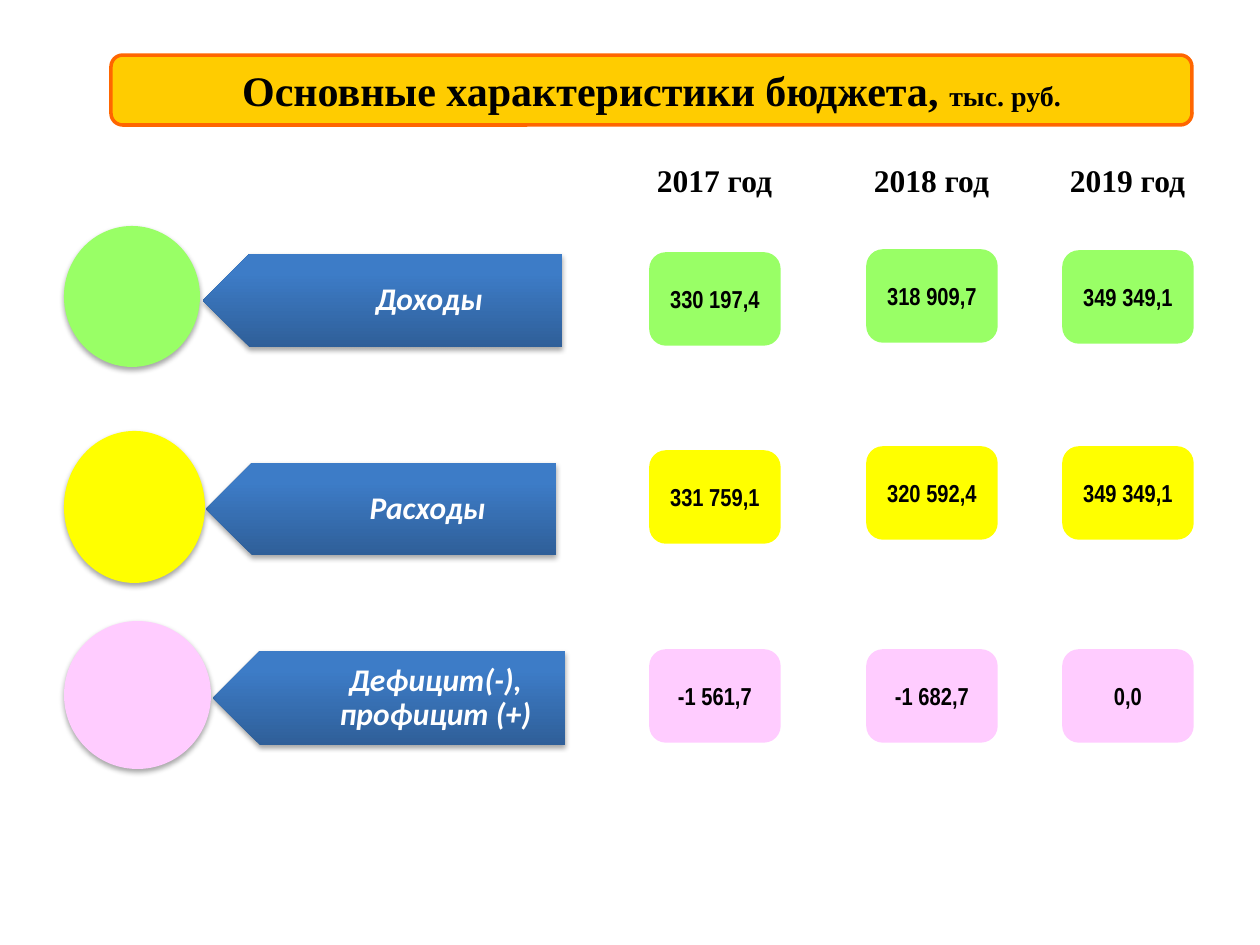
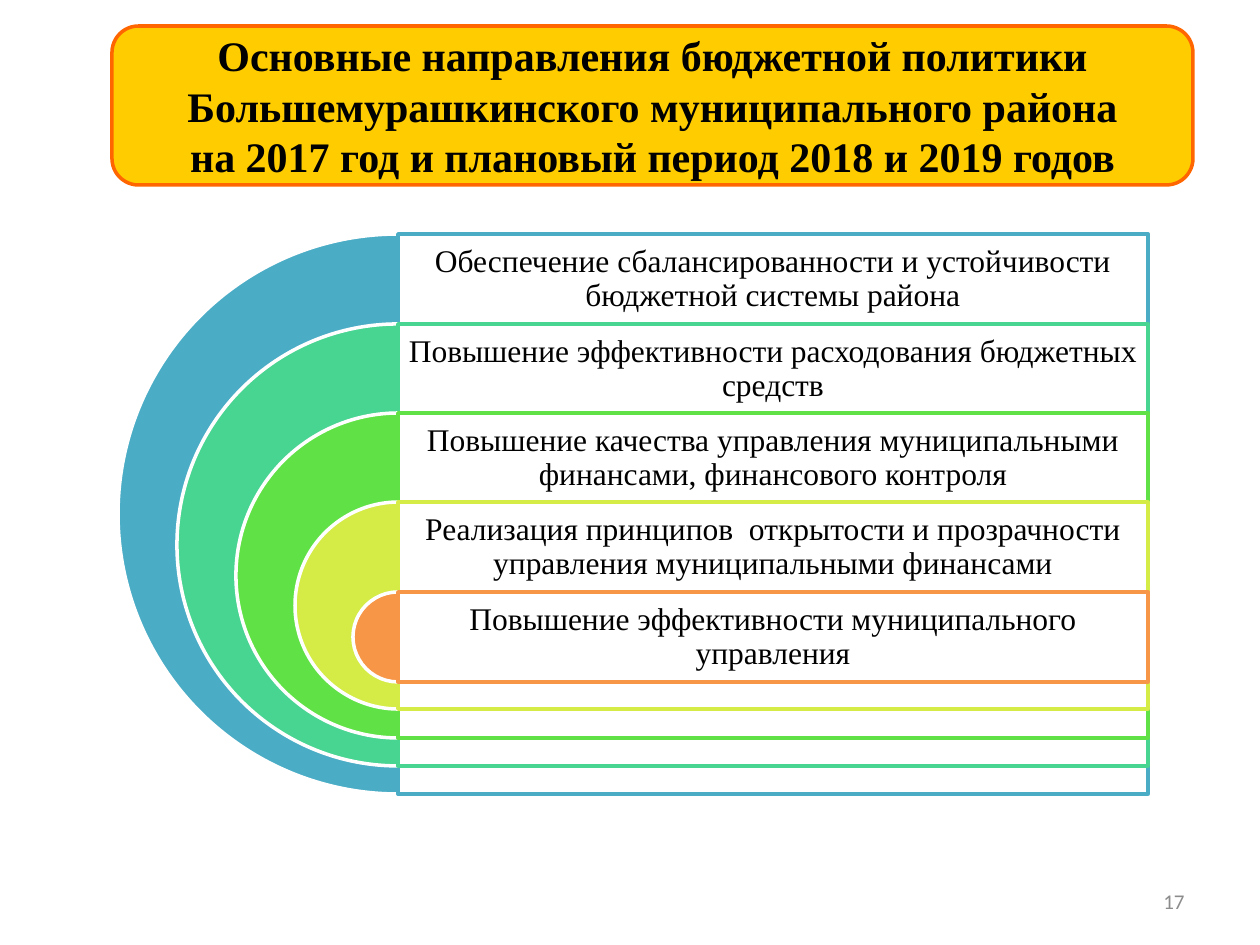
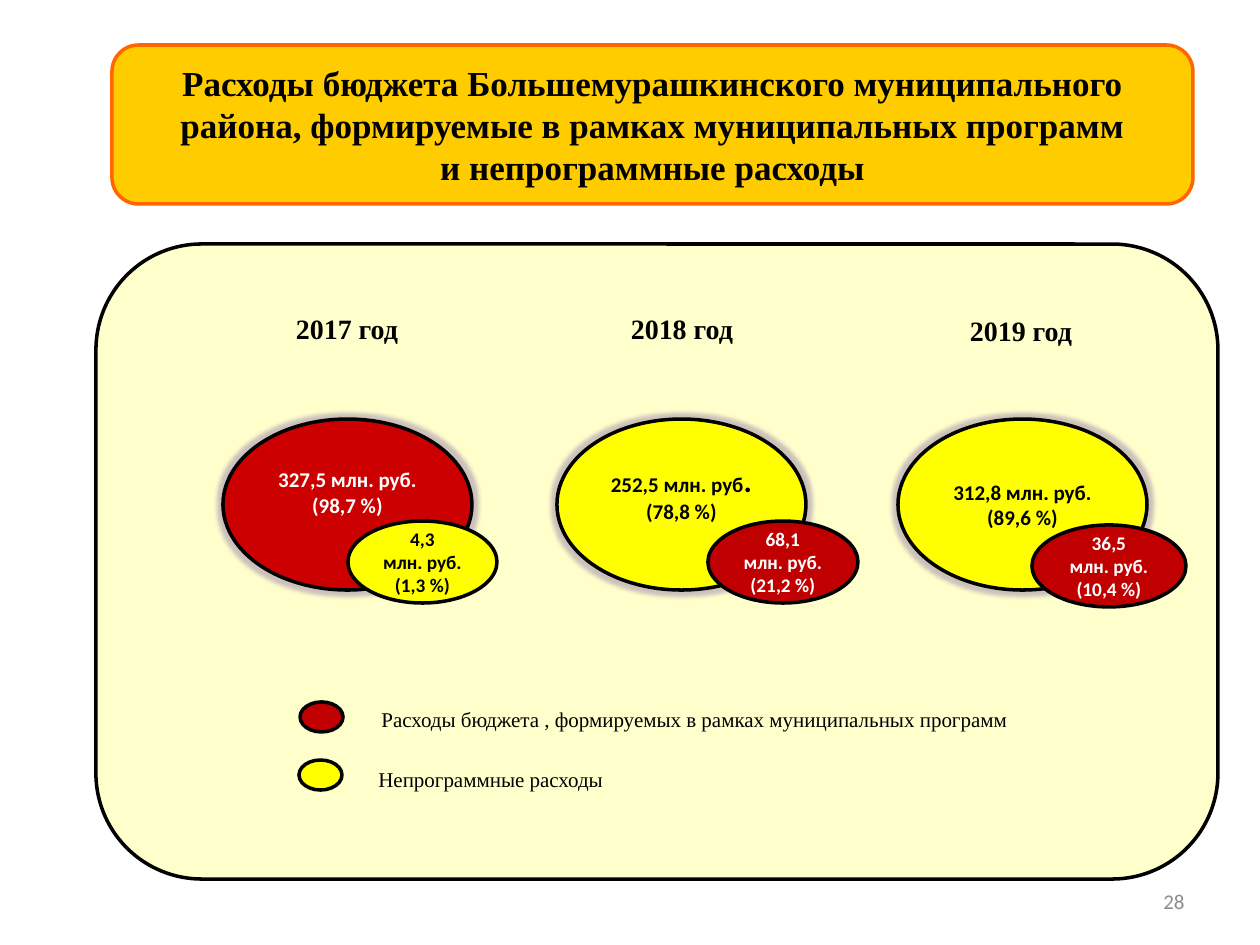
from dataclasses import dataclass
from typing import Any, NamedTuple, Optional

from lxml.etree import SubElement
from pptx import Presentation
from pptx.dml.color import RGBColor
from pptx.enum.shapes import MSO_SHAPE
from pptx.enum.text import MSO_ANCHOR, MSO_AUTO_SIZE, PP_ALIGN
from pptx.oxml.ns import qn
from pptx.util import Emu, Pt

EMU_PER_PX = 914400 / 126

BLACK = RGBColor(0x00, 0x00, 0x00)
WHITE = RGBColor(0xFF, 0xFF, 0xFF)
GREY = RGBColor(0x8C, 0x8C, 0x8C)
GOLD = RGBColor(0xFF, 0xCC, 0x00)
ORANGE = RGBColor(0xFF, 0x66, 0x00)
GREEN = RGBColor(0x99, 0xFF, 0x66)
YELLOW = RGBColor(0xFF, 0xFF, 0x00)
PINK = RGBColor(0xFF, 0xCC, 0xFF)
CREAM = RGBColor(0xFF, 0xFF, 0xCC)
RED = RGBColor(0xCC, 0x00, 0x00)
DARK_RED = RGBColor(0xC0, 0x00, 0x00)
DARK_BLUE = RGBColor(0x2F, 0x5F, 0x99)
LIGHT_BLUE = RGBColor(0x3D, 0x7C, 0xC7)
PURPLE = RGBColor(0x80, 0x64, 0xA2)
RING_TEAL = RGBColor(0x4B, 0xAC, 0xC6)
RING_MINT = RGBColor(0x48, 0xD4, 0x91)
RING_GREEN = RGBColor(0x60, 0xE1, 0x46)
RING_LIME = RGBColor(0xD5, 0xEC, 0x46)
RING_ORANGE = RGBColor(0xF7, 0x96, 0x46)

SERIF = "Times New Roman"
TITLE_FONT = {"name": SERIF, "size": Pt(24), "bold": True}
SMALL_TITLE_FONT = {**TITLE_FONT, "size": Pt(20)}
UNIT_FONT = {**TITLE_FONT, "size": Pt(16)}
YEAR_FONT = {**TITLE_FONT, "size": Pt(18)}
GOAL_FONT = {"name": SERIF, "size": Pt(18)}
LEGEND_FONT = {"name": SERIF, "size": Pt(12)}
ARROW_FONT = {"name": "Calibri", "size": Pt(18), "bold": True, "italic": True}
VALUE_FONT = {"name": "Arial Narrow", "size": Pt(14), "bold": True}
LARGE_OVAL_FONT = {"name": "Calibri", "size": Pt(12), "bold": True}
SMALL_OVAL_FONT = {"name": "Calibri", "size": Pt(11), "bold": True}
NUMBER_FONT = {"name": "Calibri", "size": Pt(12)}


class Box(NamedTuple):
    left: int
    top: int
    width: int
    height: int


@dataclass(frozen=True)
class BudgetRow:
    label: str
    colour: RGBColor
    circle: Box
    arrow: Box
    values: tuple[str, ...]
    value_tops: tuple[int, ...]


@dataclass(frozen=True)
class Goal:
    text: str
    colour: RGBColor
    diameter: int


@dataclass(frozen=True)
class Oval:
    box: Box
    text: str
    fill: RGBColor
    text_colour: RGBColor
    bottom_margin: int = 6


BUDGET_YEARS = {"2017 год": 651, "2018 год": 868, "2019 год": 1064}
BUDGET_ROWS = (
    BudgetRow("Доходы", GREEN, Box(64, 226, 136, 141), Box(203, 254, 359, 93),
              ("330 197,4", "318 909,7", "349 349,1"), (254, 251, 252)),
    BudgetRow("Расходы", YELLOW, Box(64, 431, 141, 152), Box(206, 463, 350, 92),
              ("331 759,1", "320 592,4", "349 349,1"), (452, 448, 448)),
    BudgetRow("Дефицит(-), профицит (+)", PINK, Box(64, 621, 147, 148), Box(213, 651, 352, 94),
              ("-1 561,7", "-1 682,7", "0,0"), (651, 651, 651)),
)
GOALS = (
    Goal("Обеспечение сбалансированности и устойчивости бюджетной системы района", RING_TEAL, 560),
    Goal("Повышение эффективности расходования бюджетных средств", RING_MINT, 442),
    Goal("Повышение качества управления муниципальными финансами, финансового контроля",
         RING_GREEN, 325),
    Goal("Реализация принципов  открытости и прозрачности управления муниципальными финансами",
         RING_LIME, 207),
    Goal("Повышение эффективности муниципального управления", RING_ORANGE, 90),
)
SPENDING_YEARS = {"2017 год": (283, 305), "2018 год": (618, 305), "2019 год": (957, 307)}
LARGE_OVALS = (
    Oval(Box(223, 419, 249, 171), "327,5 млн. руб.\n(98,7 %)", RED, WHITE, 31),
    Oval(Box(557, 419, 249, 171), "252,5 млн. руб\n(78,8 %)", YELLOW, BLACK, 31),
    Oval(Box(898, 419, 249, 171), "312,8 млн. руб.\n(89,6 %)", YELLOW, BLACK),
)
SMALL_OVALS = (
    Oval(Box(348, 521, 149, 82), "4,3\nмлн. руб.\n(1,3 %)", YELLOW, BLACK),
    Oval(Box(708, 521, 150, 82), "68,1\nмлн. руб.\n(21,2 %)", DARK_RED, WHITE),
    Oval(Box(1032, 525, 154, 82), "36,5\nмлн. руб.\n(10,4 %)", DARK_RED, WHITE),
)
LEGEND = (
    ("Расходы бюджета , формируемых в рамках муниципальных программ", DARK_RED,
     Box(300, 702, 43, 30), Box(369, 700, 796, 38)),
    ("Непрограммные расходы", YELLOW, Box(299, 760, 43, 30), Box(366, 760, 857, 38)),
)


def px(length: int) -> Emu:
    return Emu(round(length * EMU_PER_PX))


def place(box: Box) -> tuple[Emu, ...]:
    return tuple(px(length) for length in box)


def set_attributes(target: Any, values: dict[str, Any]) -> None:
    for name, value in values.items():
        setattr(target, name, value)


def add_run(paragraph: Any, text: str, font: dict[str, Any], colour: RGBColor) -> None:
    run = paragraph.add_run()
    run.text = text
    set_attributes(run.font, font)
    run.font.color.rgb = colour


def write_text(shape: Any, text: str, font: dict[str, Any], colour: RGBColor = BLACK,
               align: PP_ALIGN = PP_ALIGN.CENTER, spacing: Optional[float] = None,
               **frame_format: Any) -> None:
    frame = shape.text_frame
    defaults = {"word_wrap": True, "auto_size": MSO_AUTO_SIZE.NONE,
                "vertical_anchor": MSO_ANCHOR.MIDDLE}
    set_attributes(frame, {**defaults, **frame_format})
    for index, line in enumerate(text.split("\n")):
        paragraph = frame.add_paragraph() if index else frame.paragraphs[0]
        set_attributes(paragraph, {"alignment": align, "line_spacing": spacing})
        add_run(paragraph, line, font, colour)


def add_label(slide: Any, box: Box, text: str, font: dict[str, Any], **text_format: Any) -> None:
    write_text(slide.shapes.add_textbox(*place(box)), text, font, **text_format)


def add_figure(slide: Any, kind: MSO_SHAPE, box: Box, fill: Optional[RGBColor],
               line: Optional[RGBColor] = None) -> Any:
    shape = slide.shapes.add_shape(kind, *place(box))
    shape.shadow.inherit = False
    if fill is not None:
        shape.fill.solid()
        shape.fill.fore_color.rgb = fill
    if line is None:
        shape.line.fill.background()
    else:
        shape.line.color.rgb = line
        shape.line.width = Pt(2)
    return shape


def add_effect(shape: Any, kind: str, colour: RGBColor, opacity: int, **lengths: int) -> None:
    effects = shape.element.spPr.find(qn("a:effectLst"))
    effect = SubElement(effects, qn(kind), {name: str(value) for name, value in lengths.items()})
    tint = SubElement(effect, qn("a:srgbClr"), val=str(colour))
    SubElement(tint, qn("a:alpha"), val=str(opacity * 1000))


def add_drop_shadow(shape: Any) -> None:
    add_effect(shape, "a:outerShdw", BLACK, 35,
               blurRad=Pt(3.1), dist=Pt(1.8), dir=5400000, rotWithShape=0)


def add_titled_slide(presentation: Any, box: Box, text: str, font: dict[str, Any]) -> Any:
    slide = presentation.slides.add_slide(presentation.slide_layouts[5])
    banner = add_figure(slide, MSO_SHAPE.ROUNDED_RECTANGLE, box, GOLD, ORANGE)
    title = slide.shapes.title
    set_attributes(title, dict(zip(("left", "top", "width", "height"), place(box))))
    write_text(title, text, font)
    banner.element.addnext(title.element)
    return slide


def add_page_number(slide: Any, number: str) -> None:
    add_label(slide, Box(903, 876, 294, 50), number, NUMBER_FONT,
              colour=GREY, align=PP_ALIGN.RIGHT)


def add_budget_row(slide: Any, row: BudgetRow) -> None:
    arrow = add_figure(slide, MSO_SHAPE.PENTAGON, row.arrow, None)
    arrow.element.spPr.find(qn("a:xfrm")).set("flipH", "1")
    arrow.fill.gradient()
    arrow.fill.gradient_angle = 90
    stops = ((DARK_BLUE, 0), (LIGHT_BLUE, 0.8))
    for stop, (colour, position) in zip(arrow.fill.gradient_stops, stops):
        stop.color.rgb = colour
        stop.position = position
    add_drop_shadow(arrow)
    left, top, width, height = row.arrow
    add_label(slide, Box(left + 24, top, width - 24, height), row.label, ARROW_FONT,
              colour=WHITE, spacing=0.9, margin_left=px(87), margin_right=px(18))
    add_drop_shadow(add_figure(slide, MSO_SHAPE.OVAL, row.circle, row.colour))
    for value, value_top, year_left in zip(row.values, row.value_tops, BUDGET_YEARS.values()):
        tile = add_figure(slide, MSO_SHAPE.ROUNDED_RECTANGLE,
                          Box(year_left, value_top, 128, 90), row.colour, row.colour)
        write_text(tile, value, VALUE_FONT)


def add_goal(slide: Any, goal: Goal, top: int) -> None:
    axis, width, height = 398, 750, 90
    size = goal.diameter
    ring = add_figure(slide, MSO_SHAPE.PIE, Box(axis - size // 2, top, size, size),
                      goal.colour, WHITE)
    ring.adjustments[0] = 54
    ring.adjustments[1] = 162
    panel = add_figure(slide, MSO_SHAPE.RECTANGLE, Box(axis, top, width, size),
                       WHITE, goal.colour)
    white = panel.element.spPr.find(qn("a:solidFill")).find(qn("a:srgbClr"))
    SubElement(white, qn("a:alpha"), val="90000")
    add_label(slide, Box(axis, top, width, height), goal.text, GOAL_FONT, spacing=0.9,
              margin_left=px(9), margin_right=px(9), margin_top=px(9), margin_bottom=px(9))


def add_oval(slide: Any, oval: Oval, font: dict[str, Any]) -> Any:
    shape = add_figure(slide, MSO_SHAPE.OVAL, oval.box, oval.fill, BLACK)
    write_text(shape, oval.text, font, oval.text_colour, margin_bottom=px(oval.bottom_margin))
    return shape


def build_budget_slide(presentation: Any) -> None:
    slide = add_titled_slide(presentation, Box(111, 55, 1081, 70),
                             "Основные характеристики бюджета, ", TITLE_FONT)
    add_run(slide.shapes.title.text_frame.paragraphs[0], "тыс. руб.", UNIT_FONT, BLACK)
    for row in BUDGET_ROWS:
        add_budget_row(slide, row)
    for year, left in BUDGET_YEARS.items():
        add_label(slide, Box(left - 21, 155, 169, 50), year, YEAR_FONT,
                  vertical_anchor=MSO_ANCHOR.TOP)


def build_goals_slide(presentation: Any) -> None:
    slide = add_titled_slide(
        presentation, Box(112, 26, 1081, 159),
        "Основные направления бюджетной политики Большемурашкинского муниципального района\n"
        "на 2017 год и плановый период 2018 и 2019 годов", TITLE_FONT)
    for index, goal in enumerate(GOALS):
        add_goal(slide, goal, 234 + round(index * 89.5))
    add_page_number(slide, "17")


def build_spending_slide(presentation: Any) -> None:
    slide = add_titled_slide(
        presentation, Box(112, 45, 1081, 159),
        "Расходы бюджета Большемурашкинского муниципального района, формируемые "
        "в рамках муниципальных программ\nи непрограммные расходы", SMALL_TITLE_FONT)
    add_figure(slide, MSO_SHAPE.ROUNDED_RECTANGLE, Box(96, 244, 1122, 635), CREAM, BLACK)
    add_page_number(slide, "28")
    for year, (left, top) in SPENDING_YEARS.items():
        add_label(slide, Box(left, top, 128, 47), year, UNIT_FONT,
                  word_wrap=False, vertical_anchor=MSO_ANCHOR.TOP)
    large_shapes = [add_oval(slide, oval, LARGE_OVAL_FONT) for oval in LARGE_OVALS]
    for shape in large_shapes:
        add_effect(shape, "a:glow", PURPLE, 40, rad=Pt(5))
    add_run(large_shapes[1].text_frame.paragraphs[0], ".",
            {**LARGE_OVAL_FONT, "size": Pt(18)}, BLACK)
    for oval in SMALL_OVALS:
        add_oval(slide, oval, SMALL_OVAL_FONT)
    for text, colour, marker, label in LEGEND:
        add_figure(slide, MSO_SHAPE.OVAL, marker, colour, BLACK)
        add_label(slide, label, text, LEGEND_FONT, align=PP_ALIGN.LEFT,
                  vertical_anchor=MSO_ANCHOR.TOP)


def main() -> None:
    presentation = Presentation()
    presentation.slide_width = px(1260)
    presentation.slide_height = px(945)
    build_budget_slide(presentation)
    build_goals_slide(presentation)
    build_spending_slide(presentation)
    presentation.save("out.pptx")


if __name__ == "__main__":
    main()
